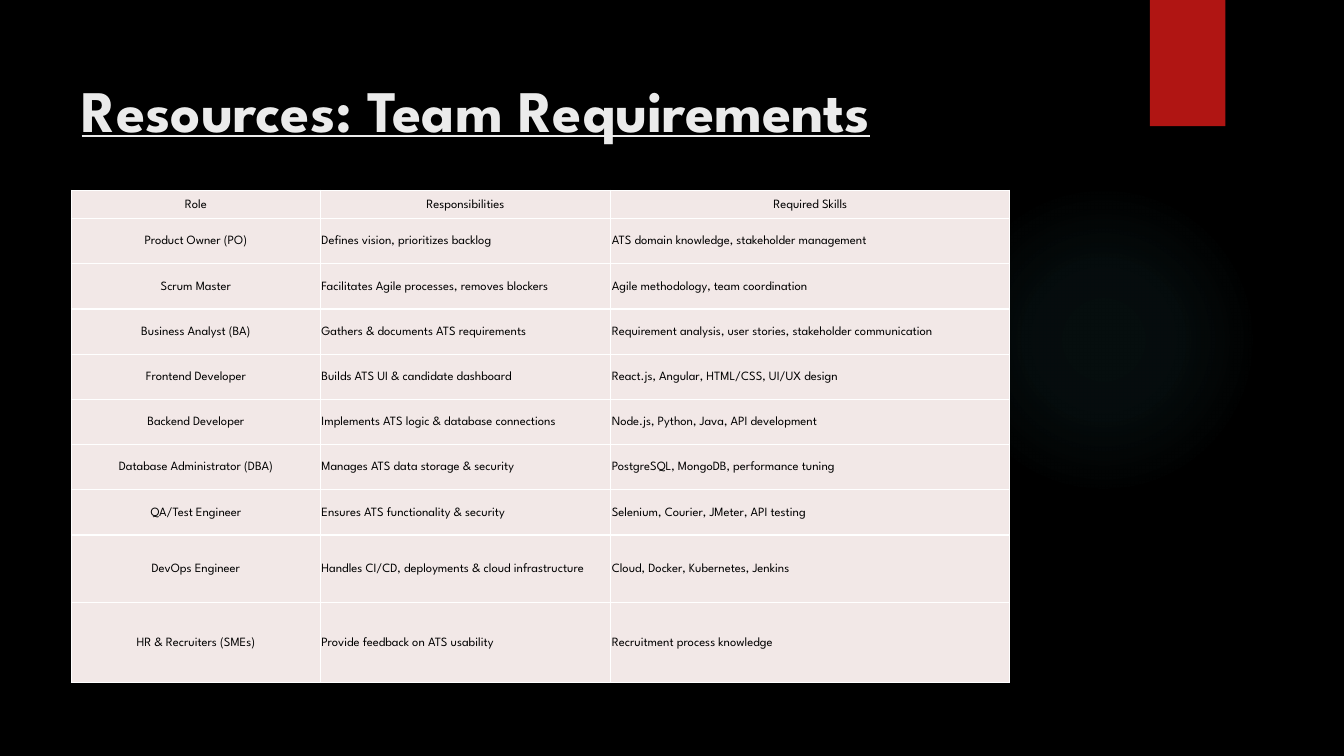
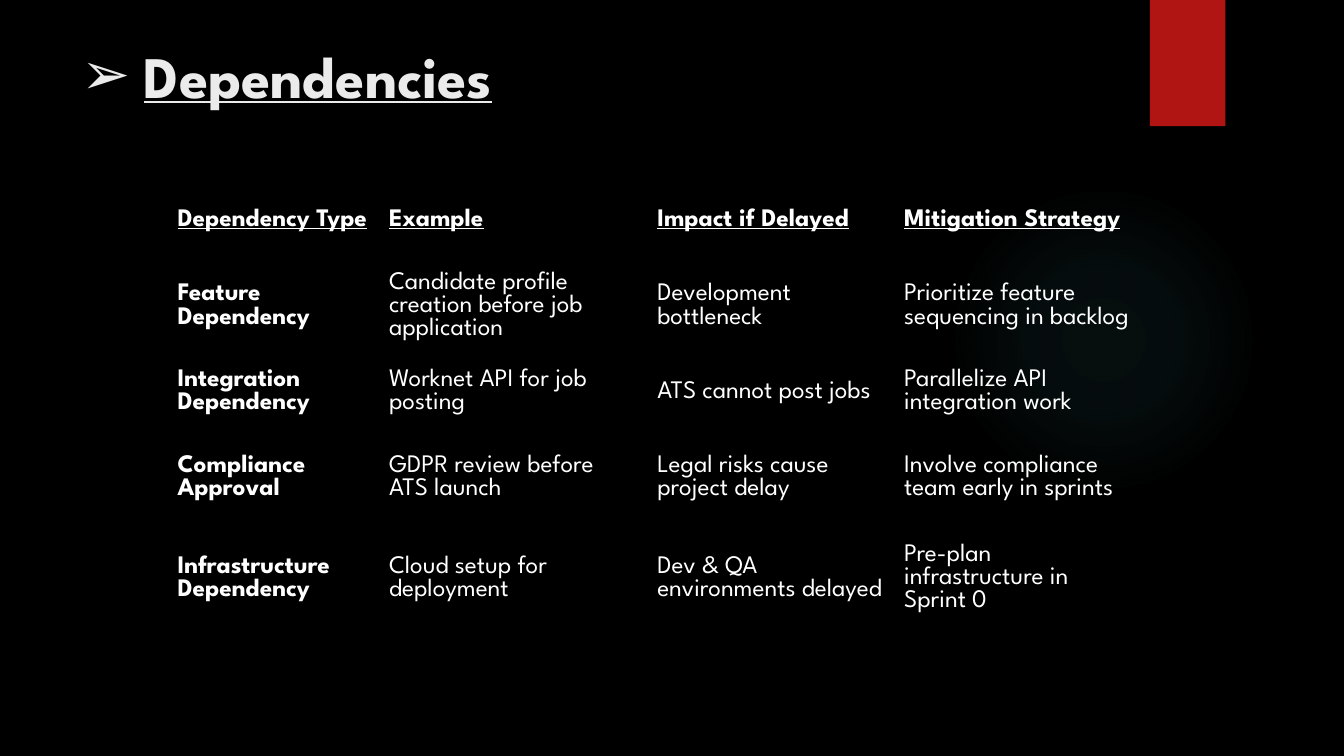
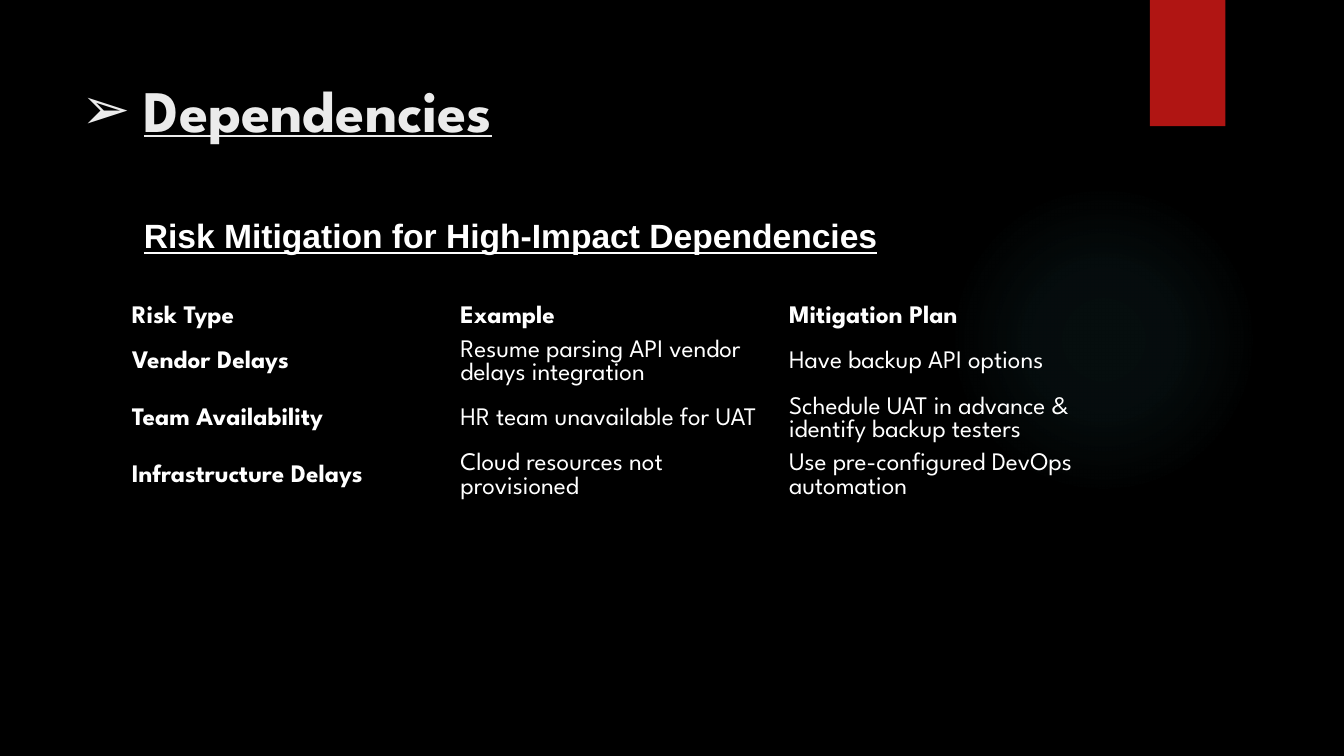
from lxml import etree
from pptx import Presentation
from pptx import util as u
from pptx.dml.color import RGBColor
from pptx.enum import shapes, text
from pptx.oxml.ns import qn

FONT = "League Spartan"
BLACK, WHITE, TITLE, RED, GLOW, CELL = "000000", "FFFFFF", "EBEBEB", "B01513", "50B9C1", "F2E8E7"
NO_GRID_STYLE = "{2D5ABB26-0587-4C30-8999-92F81FD0307C}"
TITLE_INDENT = u.Cm(1.57)

TEAM = [
    ("Role", "Responsibilities", "Required Skills"),
    ("Product Owner (PO)", "Defines vision, prioritizes backlog", "ATS domain knowledge, stakeholder management"),
    ("Scrum Master", "Facilitates Agile processes, removes blockers", "Agile methodology, team coordination"),
    ("Business Analyst (BA)", "Gathers & documents ATS requirements",
     "Requirement analysis, user stories, stakeholder communication"),
    ("Frontend Developer", "Builds ATS UI & candidate dashboard", "React.js, Angular, HTML/CSS, UI/UX design"),
    ("Backend Developer", "Implements ATS logic & database connections", "Node.js, Python, Java, API development"),
    ("Database Administrator (DBA)", "Manages ATS data storage & security",
     "PostgreSQL, MongoDB, performance tuning"),
    ("QA/Test Engineer", "Ensures ATS functionality & security", "Selenium, Courier, JMeter, API testing"),
    ("DevOps Engineer", "Handles CI/CD, deployments & cloud infrastructure", "Cloud, Docker, Kubernetes, Jenkins"),
    ("HR & Recruiters (SMEs)", "Provide feedback on ATS usability", "Recruitment process knowledge"),
]
DEPENDENCIES = [
    ("Dependency Type", "Example", "Impact if Delayed", "Mitigation Strategy"),
    ("Feature Dependency", "Candidate profile creation before job application", "Development bottleneck",
     "Prioritize feature sequencing in backlog"),
    ("Integration Dependency", "Worknet API for job posting", "ATS cannot post jobs",
     "Parallelize API integration work"),
    ("Compliance Approval", "GDPR review before ATS launch", "Legal risks cause project delay",
     "Involve compliance team early in sprints"),
    ("Infrastructure Dependency", "Cloud setup for deployment", "Dev & QA environments delayed",
     "Pre-plan infrastructure in Sprint 0"),
]
RISKS = [
    ("Risk Type", "Example", "Mitigation Plan"),
    ("Vendor Delays", "Resume parsing API vendor delays integration", "Have backup API options"),
    ("Team Availability", "HR team unavailable for UAT", "Schedule UAT in advance & identify backup testers"),
    ("Infrastructure Delays", "Cloud resources not provisioned", "Use pre-configured DevOps automation"),
]


def color(value):
    return RGBColor.from_string(value)


def add_xml(parent, tag, **attributes):
    element = etree.SubElement(parent, qn(tag))
    for name, value in attributes.items():
        element.set(name, str(value))
    return element


def add_alpha_color(parent, value, percent):
    add_xml(add_xml(parent, "a:srgbClr", val=value), "a:alpha", val=percent * 1000)


def format_runs(paragraph, size, value, bold=False, underline=False, font=FONT):
    for run in paragraph.runs:
        run.font.name, run.font.size = font, u.Pt(size)
        run.font.bold, run.font.underline = bold, underline
        run.font.color.rgb = color(value)


def add_plain_shape(slide, kind, left, top, width, height, fill):
    shape = slide.shapes.add_shape(kind, u.Cm(left), u.Cm(top), u.Cm(width), u.Cm(height))
    shape.shadow.inherit = False
    shape.fill.solid()
    shape.fill.fore_color.rgb = color(fill)
    shape.line.fill.background()
    return shape


def add_glow(slide):
    glow = add_plain_shape(slide, shapes.MSO_SHAPE.OVAL, 23.9, 4.65, 7.82, 7.82, GLOW)
    properties = glow.element.spPr
    gradient = etree.Element(qn("a:gradFill"))
    stops = add_xml(gradient, "a:gsLst")
    for position, opacity in ((0, 7), (36, 6), (69, 0), (100, 0)):
        add_alpha_color(add_xml(stops, "a:gs", pos=position * 1000), GLOW, opacity)
    path = add_xml(gradient, "a:path", path="circle")
    add_xml(path, "a:fillToRect", l=50000, t=50000, r=50000, b=50000)
    properties.replace(properties.find(qn("a:solidFill")), gradient)
    return glow


def add_ribbon(slide):
    ribbon = add_plain_shape(slide, shapes.MSO_SHAPE.RECTANGLE, 28.98, 0, 1.9, 3.18, RED)
    effects = ribbon.element.spPr.find(qn("a:effectLst"))
    shadow = add_xml(effects, "a:outerShdw", blurRad=u.Pt(3), dist=u.Pt(2), dir=5400000)
    add_alpha_color(shadow, BLACK, 45)
    return ribbon


def decorate_layout(layout, slide):
    for placeholder in list(layout.placeholders)[1:]:
        placeholder.element.getparent().remove(placeholder.element)
    for position, shape in enumerate((add_glow(slide), add_ribbon(slide)), 2):
        layout.shapes.element.insert(position, shape.element)


def set_title(slide, words, top=1.27, height=3.89, bullet=False):
    title = slide.shapes.title
    title.left, title.top, title.width, title.height = u.Cm(1.8), u.Cm(top), u.Cm(26.14), u.Cm(height)
    frame = title.text_frame
    frame.text = words
    frame.word_wrap = True
    frame.auto_size = text.MSO_AUTO_SIZE.NONE
    frame.vertical_anchor = text.MSO_ANCHOR.TOP
    frame.margin_top = u.Cm(0.58)
    paragraph = frame.paragraphs[0]
    paragraph.alignment = text.PP_ALIGN.LEFT
    if bullet:
        properties = paragraph._p.get_or_add_pPr()
        properties.set("marL", str(TITLE_INDENT))
        properties.set("indent", str(-TITLE_INDENT))
        add_xml(properties, "a:buFont", typeface="Arial")
        add_xml(properties, "a:buChar", char="➢")
    format_runs(paragraph, 42, TITLE, bold=True, underline=True)


def add_subtitle(slide, words):
    paragraph = slide.shapes.title.text_frame.add_paragraph()
    paragraph.text = words
    paragraph.alignment = text.PP_ALIGN.LEFT
    paragraph.space_before = u.Pt(51)
    paragraph._p.get_or_add_pPr().set("marL", str(TITLE_INDENT))
    format_runs(paragraph, 24, WHITE, bold=True, underline=True, font="Arial")


def add_table(slide, rows, left, top, widths, heights):
    frame = slide.shapes.add_table(len(rows), len(widths), u.Cm(left), u.Cm(top),
                                   u.Cm(sum(widths)), u.Cm(sum(heights)))
    table = frame.table
    table.first_row = table.horz_banding = False
    table._tbl.tblPr.find(qn("a:tableStyleId")).text = NO_GRID_STYLE
    for column, width in zip(table.columns, widths):
        column.width = u.Cm(width)
    for row, height, words in zip(table.rows, heights, rows):
        row.height = u.Cm(height)
        for cell, word in zip(row.cells, words):
            cell.text_frame.text = word
            cell.vertical_anchor = text.MSO_ANCHOR.MIDDLE
    return table


def positioned_cells(table):
    for r, row in enumerate(table.rows):
        for c, cell in enumerate(row.cells):
            yield r, c, cell


def add_borders(cell, value):
    properties = cell._tc.get_or_add_tcPr()
    for side in ("a:lnL", "a:lnR", "a:lnT", "a:lnB"):
        line = add_xml(properties, side, w=u.Pt(1))
        add_xml(add_xml(line, "a:solidFill"), "a:srgbClr", val=value)


def style_grid_table(table):
    for r, c, cell in positioned_cells(table):
        cell.margin_left = cell.margin_top = cell.margin_right = u.Cm(0.03)
        cell.margin_bottom = 0
        add_borders(cell, WHITE)
        cell.fill.solid()
        cell.fill.fore_color.rgb = color(CELL)
        paragraph = cell.text_frame.paragraphs[0]
        centred = r == 0 or c == 0
        paragraph.alignment = text.PP_ALIGN.CENTER if centred else text.PP_ALIGN.LEFT
        format_runs(paragraph, 9, BLACK)


def style_open_table(table, underline_header=False):
    for r, c, cell in positioned_cells(table):
        cell.fill.background()
        format_runs(cell.text_frame.paragraphs[0], 18, WHITE, bold=r == 0 or c == 0,
                    underline=underline_header and r == 0)


def main():
    presentation = Presentation()
    presentation.slide_width, presentation.slide_height = u.Cm(33.87), u.Cm(19.05)
    background = presentation.slide_master.background.fill
    background.solid()
    background.fore_color.rgb = color(BLACK)
    layout = presentation.slide_layouts[5]
    team, dependencies, risks = [presentation.slides.add_slide(layout) for _ in range(3)]
    decorate_layout(layout, team)

    set_title(team, "Resources: Team Requirements")
    style_grid_table(add_table(team, TEAM, 1.8, 4.8, [6.27, 7.32, 10.06], [0.71] + [1.14] * 7 + [1.7, 2.01]))

    set_title(dependencies, "Dependencies", top=0.41, height=2.57, bullet=True)
    style_open_table(add_table(dependencies, DEPENDENCIES, 4.22, 4.67, [5.33, 6.76, 6.22, 6.22],
                               [1.78, 2.54, 1.78, 2.54, 2.54]), underline_header=True)

    set_title(risks, "Dependencies", bullet=True)
    add_subtitle(risks, "Risk Mitigation for High-Impact Dependencies")
    style_open_table(add_table(risks, RISKS, 3.07, 7.59, [8.28] * 3, [0.84] + [1.43] * 3))

    presentation.save("out.pptx")


if __name__ == "__main__":
    main()
